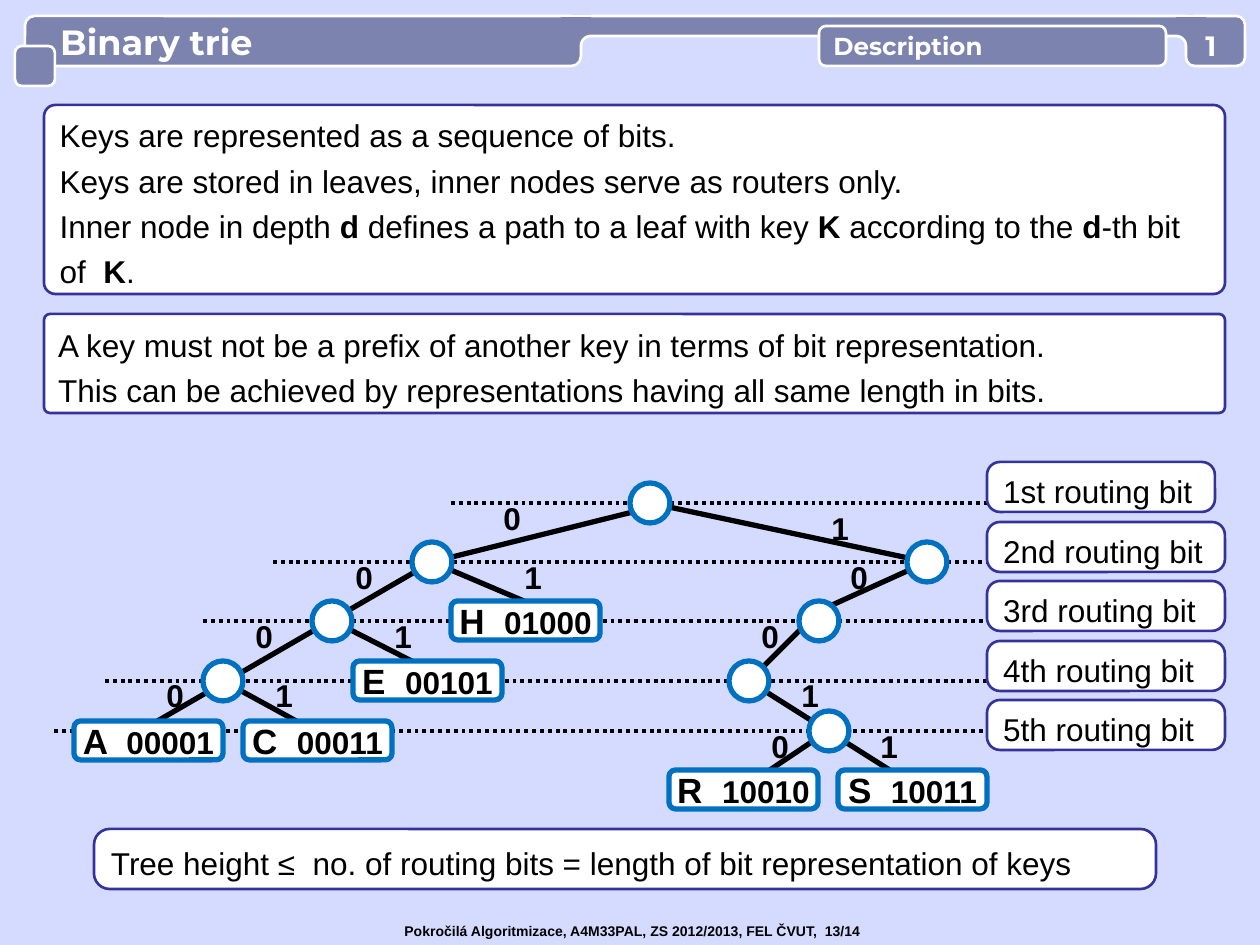
"""Build the slide that describes a binary trie."""
from dataclasses import dataclass
from math import cos, pi, sin

from pptx import Presentation
from pptx.dml.color import RGBColor
from pptx.enum.dml import MSO_LINE
from pptx.enum.shapes import MSO_CONNECTOR, MSO_SHAPE
from pptx.enum.text import MSO_ANCHOR, MSO_AUTO_SIZE, PP_ALIGN
from pptx.oxml.ns import qn
from pptx.util import Emu, Pt

ROUND, OVAL, RECT = MSO_SHAPE.ROUNDED_RECTANGLE, MSO_SHAPE.OVAL, MSO_SHAPE.RECTANGLE
STRAIGHT, DOTTED = MSO_CONNECTOR.STRAIGHT, MSO_LINE.ROUND_DOT
MIDDLE, TOP, NO_FIT = MSO_ANCHOR.MIDDLE, MSO_ANCHOR.TOP, MSO_AUTO_SIZE.NONE
LEFT, CENTER = PP_ALIGN.LEFT, PP_ALIGN.CENTER

SCALE = 914400 / 126
BACK, BAR, WHITE, BLACK = "D5DAFF", "7D83AF", "FFFFFF", "000000"
NAVY, BLUE = "333399", "0070C0"
BODY, HEAD = "Arial", "Montserrat"
MARGINS = ("margin_left", "margin_top", "margin_right", "margin_bottom")
NO_INSETS = dict.fromkeys(MARGINS, 0)


@dataclass(frozen=True)
class Box:
    x: int
    y: int
    w: int
    h: int


@dataclass(frozen=True)
class Run:
    text: str
    size: int = 18
    bold: bool = False
    font: str = BODY
    colour: str = BLACK


@dataclass(frozen=True)
class Leaf:
    key: str
    bits: str
    x: int
    y: int


@dataclass(frozen=True)
class Edge:
    x1: int
    y1: int
    x2: int
    y2: int


@dataclass(frozen=True)
class Bit:
    value: str
    x: int
    y: int


LEVELS = [Edge(451, 503, 1166, 503), Edge(273, 562, 1137, 562), Edge(203, 621, 1176, 621),
          Edge(105, 681, 1176, 681), Edge(54, 731, 1166, 731)]
EDGES = [Edge(123, 741, 432, 562), Edge(333, 741, 223, 681), Edge(451, 681, 333, 621),
         Edge(571, 621, 432, 562), Edge(669, 503, 432, 562), Edge(927, 562, 650, 503),
         Edge(927, 562, 819, 611), Edge(819, 611, 749, 681), Edge(749, 681, 828, 731),
         Edge(828, 731, 937, 800), Edge(740, 790, 828, 731)]
BITS = [Bit("0", 154, 670), Bit("1", 263, 670), Bit("0", 243, 611), Bit("1", 382, 611),
        Bit("0", 343, 552), Bit("0", 491, 493), Bit("1", 512, 552), Bit("1", 819, 503),
        Bit("0", 838, 552), Bit("0", 749, 611), Bit("1", 789, 670), Bit("0", 759, 721),
        Bit("1", 868, 721)]
LEAVES = [Leaf("A", "00001", 74, 721), Leaf("C", "00011", 243, 721),
          Leaf("E", "00101", 353, 661), Leaf("H", "01000", 451, 601),
          Leaf("R", "10010", 669, 770), Leaf("S", "10011", 838, 770)]
NODES = [(650, 503), (432, 562), (927, 562), (332, 621), (819, 621), (223, 681),
         (749, 681), (829, 731)]
RULES = ["Keys are represented as a sequence of bits.",
         "Keys are stored in leaves, inner nodes serve as routers only.",
         "Inner node in depth *d* defines a path to a leaf with key *K* "
         "according to the *d*-th bit of  *K*."]
PREFIX = ["A key must not be a prefix of another key in terms of bit representation.",
          "This can be achieved by representations having all same length in bits."]
HEIGHT = ["Tree height ≤  no. of routing bits = length of bit representation of keys"]


def px(value: float) -> Emu:
    """Turn pixels into EMU."""
    return Emu(round(value * SCALE))


def rgb(colour: str) -> RGBColor:
    """Turn a hex string into a colour."""
    return RGBColor.from_string(colour)


def place(sp, box: Box) -> None:
    """Move and size a shape."""
    for name, value in zip(("left", "top", "width", "height"), (box.x, box.y, box.w, box.h)):
        setattr(sp, name, px(value))


def write(tf, paragraphs: list[list[Run]], align=LEFT, spacing=1.0, **frame) -> None:
    """Fill a text frame with formatted runs."""
    settings = {"word_wrap": True, "auto_size": NO_FIT, "vertical_anchor": MIDDLE} | frame
    for name, value in settings.items():
        setattr(tf, name, value)
    for i, runs in enumerate(paragraphs):
        p = tf.add_paragraph() if i else tf.paragraphs[0]
        p.alignment, p.line_spacing = align, spacing
        for run in runs:
            r = p.add_run()
            r.text = run.text
            for name, value in {"size": Pt(run.size), "bold": run.bold, "name": run.font}.items():
                setattr(r.font, name, value)
            r.font.color.rgb = rgb(run.colour)


def paint(sp, fill: str | None, line: str | None, width: float = 1.5) -> None:
    """Set fill and outline and drop the shadow."""
    sp.shadow.inherit = False
    for part, colour in ((sp.fill, fill), (sp.line.fill, line)):
        if colour:
            part.solid()
            part.fore_color.rgb = rgb(colour)
        else:
            part.background()
    if line:
        sp.line.width = Pt(width)


def add_box(s, kind, box: Box, fill: str, line: str | None, width=1.5, adj=None):
    """Add a preset shape."""
    sp = s.shapes.add_shape(kind, 0, 0, 0, 0)
    place(sp, box)
    paint(sp, fill, line, width)
    if adj is not None:
        sp.adjustments[0] = adj
    return sp


def add_line(s, edge: Edge, colour: str, width: float, dash=None) -> None:
    """Add a straight connector."""
    ends = [px(v) for v in (edge.x1, edge.y1, edge.x2, edge.y2)]
    ln = s.shapes.add_connector(STRAIGHT, *ends)
    ln.line.color.rgb, ln.line.width = rgb(colour), Pt(width)
    if dash:
        ln.line.dash_style = dash
    ln._element.spPr.append(ln._element.makeelement(qn("a:effectLst"), {}))


def add_label(s, box: Box, run: Run, **frame) -> None:
    """Add a text box with one run."""
    sp = s.shapes.add_textbox(0, 0, 0, 0)
    place(sp, box)
    write(sp.text_frame, [[run]], **frame)


def add_panel(s, box: Box, lines: list[str], adj: float) -> None:
    """Add a white panel whose starred words are bold."""
    sp = add_box(s, ROUND, box, WHITE, NAVY, adj=adj)
    rows = [[Run(t, bold=i % 2 == 1) for i, t in enumerate(line.split("*"))] for line in lines]
    write(sp.text_frame, rows, spacing=1.2)


def add_join(s, x: int, side: int) -> None:
    """Merge two header bars with a rounded inner corner at x."""
    left = min(x, x - 30 * side)
    add_box(s, RECT, Box(left, 16, 30, 30), BAR, None)
    add_line(s, Edge(left, 16, left + 30, 16), WHITE, 1.5)
    turns = [i * pi / 16 for i in range(9)]
    arc = [(px(x - 10 * side * sin(a)), px(46 - 10 * cos(a))) for a in turns]
    for points, fill, line in ((arc + [(px(x), px(46))], BACK, None), (arc, None, WHITE)):
        fb = s.shapes.build_freeform(*points[0])
        fb.add_line_segments(points[1:], close=line is None)
        paint(fb.convert_to_shape(), fill, line)


def draw_tree(s) -> None:
    """Draw the trie with its levels, edges, bits, leaves and nodes."""
    for level in LEVELS:
        add_line(s, level, BLACK, 2.25, DOTTED)
    for edge in EDGES:
        add_line(s, edge, BLACK, 3)
    for bit in BITS:
        add_label(s, Box(bit.x, bit.y, 43, 50), Run(bit.value, bold=True),
                  word_wrap=False, vertical_anchor=TOP)
    for leaf in LEAVES:
        sp = add_box(s, ROUND, Box(leaf.x, leaf.y, 149, 39), WHITE, BLUE, 3)
        runs = [Run(leaf.key + "  ", 20, True), Run(leaf.bits, bold=True)]
        write(sp.text_frame, [runs], CENTER, **NO_INSETS)
    for x, y in NODES:
        add_box(s, OVAL, Box(x - 20, y - 20, 40, 40), WHITE, BLUE, 3)
    for i, name in enumerate(("1st", "2nd", "3rd", "4th", "5th")):
        box = Box(987, 462 + round(59.6 * i), 238 if i else 228, 50)
        add_panel(s, box, [f"{name} routing bit"], 0.26)


def draw_header(s) -> None:
    """Draw the header bars, the title, the topic and the number."""
    add_box(s, ROUND, Box(25, 16, 556, 50), BAR, WHITE, adj=0.19)
    add_box(s, ROUND, Box(581, 16, 615, 20), BAR, WHITE, adj=0.5)
    add_join(s, 591, 1)
    add_box(s, ROUND, Box(15, 46, 40, 40), BAR, WHITE, adj=0.17)
    add_box(s, ROUND, Box(1186, 16, 59, 50), BAR, WHITE, adj=0.17)
    add_join(s, 1176, -1)
    topic = add_box(s, ROUND, Box(819, 26, 347, 40), BAR, WHITE, adj=0.17)
    write(topic.text_frame, [[Run("Description", 14, True, HEAD, WHITE)]])
    add_label(s, Box(1186, 28, 50, 34), Run("1", 16, True, HEAD, WHITE), align=CENTER, **NO_INSETS)
    title = s.shapes.title
    place(title, Box(60, 16, 510, 50))
    write(title.text_frame, [[Run("Binary trie", 20, True, HEAD, WHITE)]], **NO_INSETS)
    s.shapes._spTree.append(title._element)


def main() -> None:
    """Build and save the slide."""
    prs = Presentation()
    prs.slide_width, prs.slide_height = px(1260), px(945)
    s = prs.slides.add_slide(prs.slide_layouts[5])
    s.background.fill.solid()
    s.background.fill.fore_color.rgb = rgb(BACK)
    draw_tree(s)
    add_panel(s, Box(94, 829, 1062, 60), HEIGHT, 0.26)
    add_panel(s, Box(44, 105, 1181, 189), RULES, 0.06)
    add_panel(s, Box(44, 314, 1181, 99), PREFIX, 0.06)
    draw_header(s)
    footer = "Pokročilá Algoritmizace, A4M33PAL, ZS 2012/2013, FEL ČVUT,  13/14"
    add_label(s, Box(392, 916, 491, 30), Run(footer, 8, True), word_wrap=False, vertical_anchor=TOP)
    prs.save("out.pptx")


if __name__ == "__main__":
    main()
